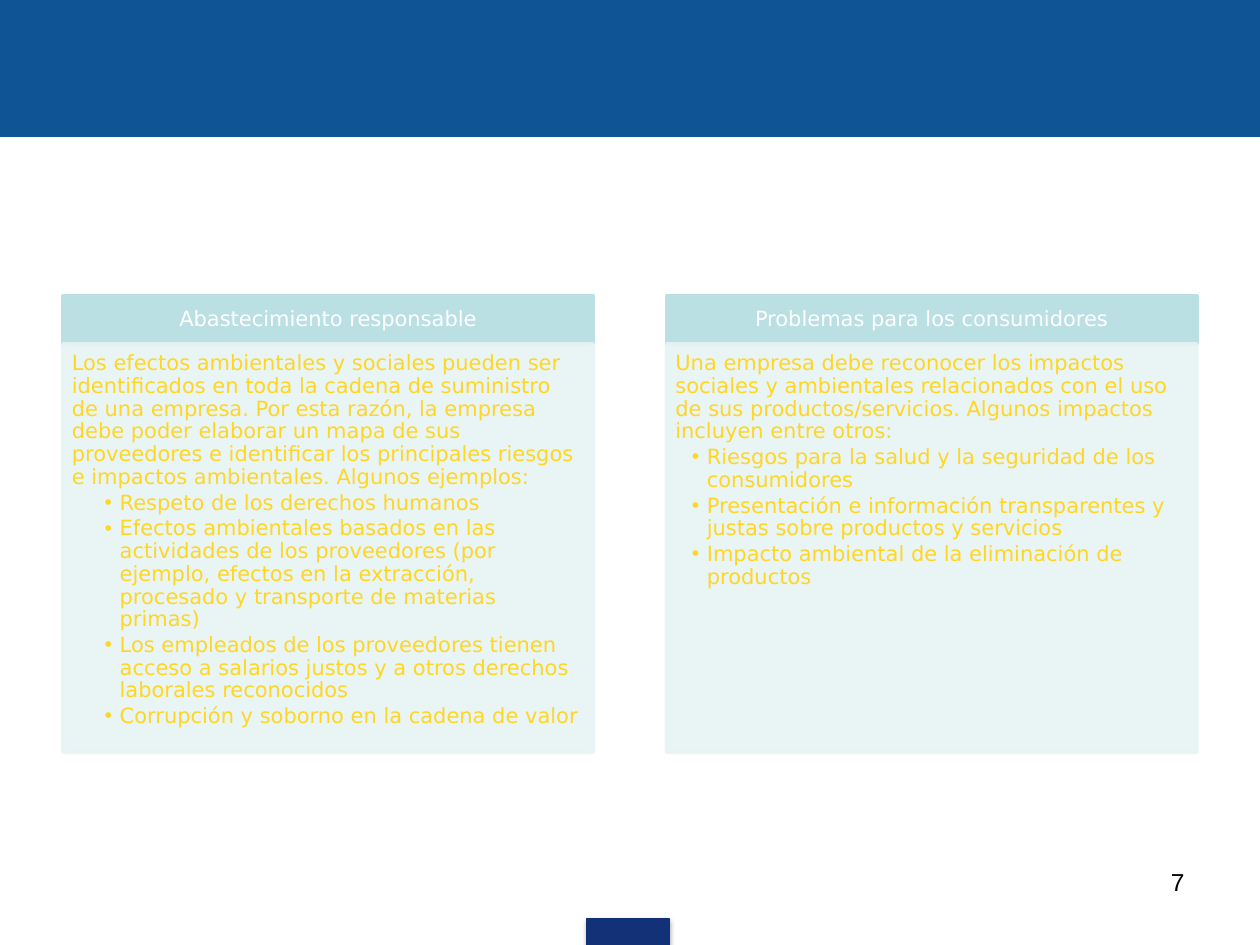
from lxml import etree
from pptx import Presentation
from pptx import util as u
from pptx.dml.color import RGBColor
from pptx.enum import shapes, text
from pptx.oxml.ns import qn

BANNER_BLUE = RGBColor(0x0F, 0x54, 0x94)
TAB_BLUE = RGBColor(0x13, 0x31, 0x76)
HEADER_TEAL = RGBColor(0xBB, 0xE0, 0xE3)
PANEL_TEAL = RGBColor(0xE7, 0xF3, 0xF4)
YELLOW = RGBColor(0xFF, 0xD6, 0x24)
WHITE = RGBColor(0xFF, 0xFF, 0xFF)
BLACK = RGBColor(0x00, 0x00, 0x00)

COLUMN_WIDTH = 4.21
COLUMN_TOP = 2.35
HEADER_HEIGHT = 0.38
PANEL_HEIGHT = 3.24

COLUMNS = [
    {
        "left": 0.5, "header": "Abastecimiento responsable", "level": 2, "margin": 0.38,
        "intro": "Los efectos ambientales y sociales pueden ser identificados en toda la "
                 "cadena de suministro de una empresa. Por esta razón, la empresa debe poder "
                 "elaborar un mapa de sus proveedores e identificar los principales riesgos e "
                 "impactos ambientales. Algunos ejemplos:",
        "bullets": [
            "Respeto de los derechos humanos",
            "Efectos ambientales basados en las actividades de los proveedores (por ejemplo, "
            "efectos en la extracción, procesado y transporte de materias primas)",
            "Los empleados de los proveedores tienen acceso a salarios justos y a otros "
            "derechos laborales reconocidos",
            "Corrupción y soborno en la cadena de valor",
        ],
    },
    {
        "left": 5.29, "header": "Problemas para los consumidores", "level": 1, "margin": 0.25,
        "intro": "Una empresa debe reconocer los impactos sociales y ambientales relacionados "
                 "con el uso de sus productos/servicios. Algunos impactos incluyen entre otros:",
        "bullets": [
            "Riesgos para la salud y la seguridad de los consumidores",
            "Presentación e información transparentes y justas sobre productos y servicios",
            "Impacto ambiental de la eliminación de productos",
        ],
    },
]


def place(shape, left, top, width, height):
    """Position and size a shape in inches."""
    shape.left, shape.top = u.Inches(left), u.Inches(top)
    shape.width, shape.height = u.Inches(width), u.Inches(height)


def paint(shape, color, line_width):
    """Give a shape one colour for fill and outline."""
    shape.fill.solid()
    shape.fill.fore_color.rgb = color
    shape.line.color.rgb = color
    shape.line.width = u.Pt(line_width)


def set_opacity(shape, percent):
    """Make the fill and outline of a shape partly transparent."""
    for color in shape._element.spPr.iter(qn("a:srgbClr")):
        etree.SubElement(color, qn("a:alpha"), val=str(percent * 1000))


def set_frame(shape, margins, anchor):
    """Set insets, wrapping and anchoring of a text frame."""
    frame = shape.text_frame
    frame.word_wrap = True
    frame.auto_size = text.MSO_AUTO_SIZE.NONE
    frame.vertical_anchor = anchor
    (frame.margin_left, frame.margin_top,
     frame.margin_right, frame.margin_bottom) = map(u.Inches, margins)
    return frame


def add_run(paragraph, words, color, size=12, font="DejaVu Sans"):
    """Append a formatted run to a paragraph."""
    run = paragraph.add_run()
    run.text = words
    run.font.name = font
    run.font.size = u.Pt(size)
    run.font.bold = False
    run.font.color.rgb = color


def format_paragraph(paragraph, level=0, margin=0.0, bullet=None):
    """Set spacing, indent and bullet of a paragraph."""
    paragraph.level = level
    paragraph.line_spacing = 0.9
    paragraph.space_before = u.Pt(0)
    paragraph.space_after = u.Pt(1.8)
    properties = paragraph._p.get_or_add_pPr()
    properties.set("marL", str(u.Inches(margin)))
    properties.set("indent", str(u.Inches(-0.12 if bullet else 0)))
    if bullet:
        etree.SubElement(properties, qn("a:buChar"), char=bullet)
    else:
        etree.SubElement(properties, qn("a:buNone"))


def add_bar(slide, left, top, width, height, color):
    """Add a plain filled rectangle."""
    bar = slide.shapes.add_shape(shapes.MSO_SHAPE.RECTANGLE, 0, 0, 0, 0)
    place(bar, left, top, width, height)
    paint(bar, color, 0.75)
    bar.shadow.inherit = False
    return bar


def add_soft_shadow(shape):
    """Put a soft shadow below a shape."""
    effects = shape._element.spPr.find(qn("a:effectLst"))
    shadow = etree.SubElement(
        effects, qn("a:outerShdw"), blurRad=str(u.Pt(3.1)), dist=str(u.Pt(1.8)),
        dir="5400000", rotWithShape="0")
    color = etree.SubElement(shadow, qn("a:srgbClr"), val=str(BLACK))
    etree.SubElement(color, qn("a:alpha"), val="35000")


def fill_header(header, column):
    """Format and fill the header of a column."""
    place(header, column["left"], COLUMN_TOP, COLUMN_WIDTH, HEADER_HEIGHT)
    paint(header, HEADER_TEAL, 2)
    frame = set_frame(header, (0.09, 0.05, 0.09, 0.05), text.MSO_ANCHOR.MIDDLE)
    paragraph = frame.paragraphs[0]
    format_paragraph(paragraph)
    paragraph.alignment = text.PP_ALIGN.CENTER
    add_run(paragraph, column["header"], WHITE)


def fill_panel(panel, column):
    """Format and fill the list panel of a column."""
    place(panel, column["left"], COLUMN_TOP + HEADER_HEIGHT, COLUMN_WIDTH, PANEL_HEIGHT)
    paint(panel, PANEL_TEAL, 2)
    set_opacity(panel, 90)
    frame = set_frame(panel, (0.07, 0.07, 0.09, 0.1), text.MSO_ANCHOR.TOP)
    intro = frame.paragraphs[0]
    format_paragraph(intro, level=1)
    add_run(intro, column["intro"], YELLOW)
    for words in column["bullets"]:
        paragraph = frame.add_paragraph()
        format_paragraph(paragraph, column["level"], column["margin"], "•")
        add_run(paragraph, words, YELLOW)


def add_page_number(slide, number):
    """Add the right-aligned page number."""
    box = slide.shapes.add_textbox(0, 0, 0, 0)
    place(box, 7.17, 6.83, 2.33, 0.52)
    frame = set_frame(box, (0.1, 0.05, 0.1, 0.05), text.MSO_ANCHOR.TOP)
    paragraph = frame.paragraphs[0]
    paragraph.alignment = text.PP_ALIGN.RIGHT
    add_run(paragraph, number, BLACK, 14, "Arial")


def main():
    """Build the slide and save it."""
    presentation = Presentation()
    presentation.slide_width, presentation.slide_height = u.Inches(10), u.Inches(7.5)
    slide = presentation.slides.add_slide(presentation.slide_layouts[4])
    title, *placeholders = slide.placeholders
    title._element.getparent().remove(title._element)

    add_bar(slide, 0, 0, 10, 1.08, BANNER_BLUE)
    add_soft_shadow(add_bar(slide, 4.66, 7.29, 0.65, 0.22, TAB_BLUE))
    for column, header, panel in zip(COLUMNS, placeholders[::2], placeholders[1::2]):
        fill_header(header, column)
        fill_panel(panel, column)
    add_page_number(slide, "7")
    presentation.save("out.pptx")


if __name__ == "__main__":
    main()
